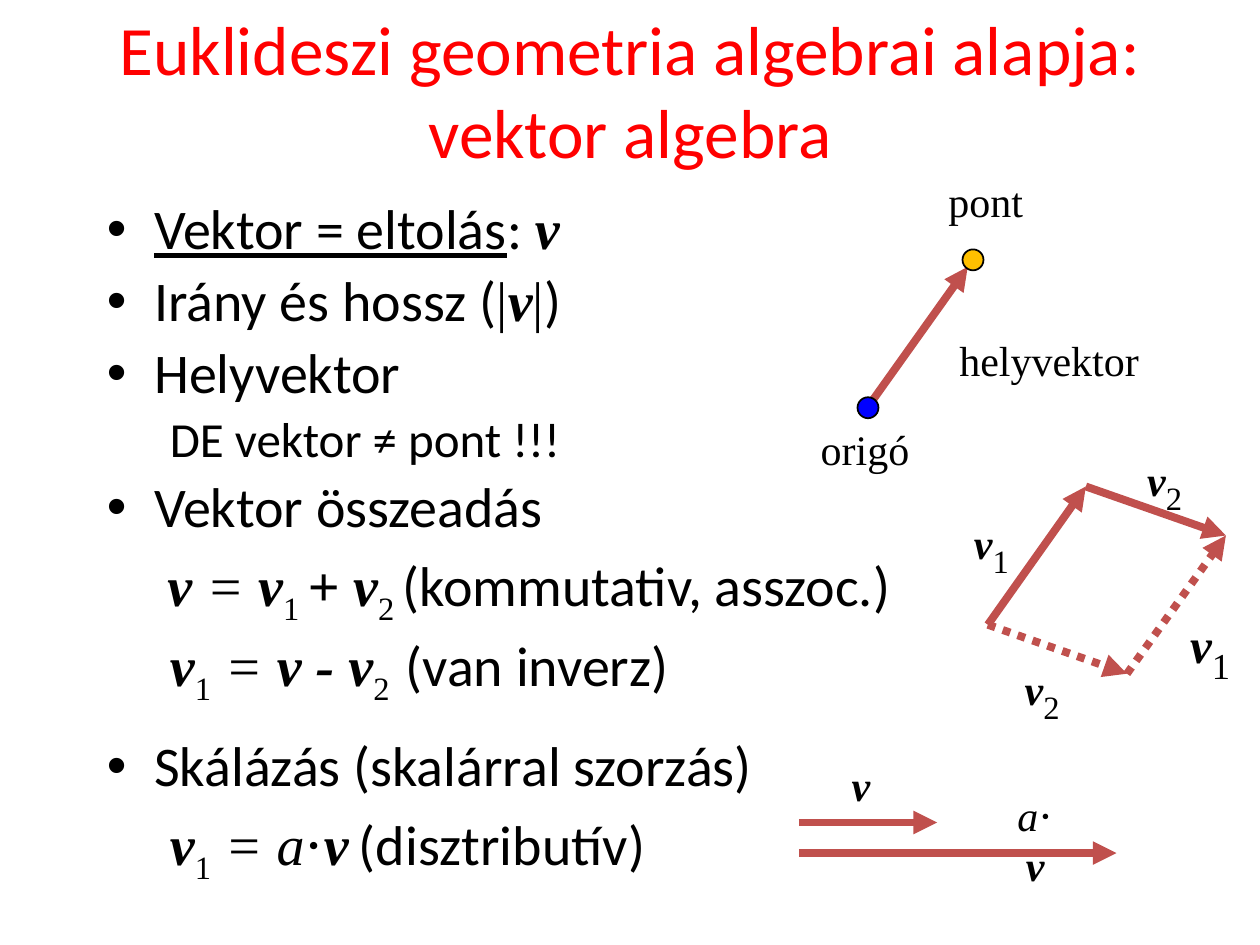
from lxml.etree import SubElement
from pptx import Presentation
from pptx.dml.color import RGBColor
from pptx.enum.dml import MSO_LINE
from pptx.enum.shapes import MSO_CONNECTOR, MSO_SHAPE
from pptx.enum.text import MSO_ANCHOR, MSO_AUTO_SIZE, PP_ALIGN
from pptx.oxml.ns import qn
from pptx.util import Pt

COLORS = {"title": "FF0000", "text": "000000", "vector": "C0504D",
          "point": "FFC000", "origin": "0000FF"}
SANS, SERIF = "Calibri", "Times New Roman"

# Run styles: font attributes, plus an optional baseline shift
STYLES = {
    "plain": {"name": SANS},
    "underlined": {"name": SANS, "underline": True},
    "serif": {"name": SERIF},
    "scalar": {"name": SERIF, "italic": True},
    "vector": {"name": SERIF, "bold": True, "italic": True},
    "subscript": {"name": SERIF, "baseline": -25000},
}
# Paragraph kinds: left margin, first-line indent, text size
KINDS = {"bullet": (27, -27, 32), "sum": (34.6, 0, 32),
         "formula": (36, 0, 32), "note": (36, 0, 28)}

BODY = [
    ("bullet", [("Vektor = eltolás", "underlined"), (": ", "plain"), ("v", "vector")]),
    ("bullet", [("Irány és hossz (", "plain"), ("|", "serif"), ("v", "vector"),
                ("|", "serif"), (")", "plain")]),
    ("bullet", [("Helyvektor", "plain")]),
    ("note", [("DE vektor ≠ pont !!!", "plain")]),
    ("bullet", [("Vektor összeadás", "plain")]),
    ("sum", [("v", "vector"), (" = ", "scalar"), ("v", "vector"), ("1 ", "subscript"),
             ("+ v", "vector"), ("2 ", "subscript"), ("(kommutativ, asszoc.)", "plain")]),
    ("formula", [("v", "vector"), ("1", "subscript"), (" = ", "scalar"),
                 ("v - v", "vector"), ("2  ", "subscript"), ("(van inverz)", "plain")]),
    ("bullet", [("Skálázás (skalárral szorzás)", "plain")]),
    ("formula", [("v", "vector"), ("1", "subscript"), (" = a⋅", "scalar"),
                 ("v\t", "vector"), ("(disztributív)", "plain")]),
]
SECTION_GAP = 15.6   # extra space before the scaling section
REMARK_TAB = 187     # where the remark after the last formula starts


def add_run(paragraph, text, style, size, color="text"):
    run = paragraph.add_run()
    run.text = text
    values = {"size": Pt(size), "bold": False, "italic": False, **STYLES[style]}
    baseline = values.pop("baseline", None)
    for name, value in values.items():
        setattr(run.font, name, value)
    run.font.color.rgb = RGBColor.from_string(COLORS[color])
    if baseline:
        run.font._element.set("baseline", str(baseline))


def add_title(slide, left, top, width, height):
    title = slide.shapes.title
    box = {"left": left, "top": top, "width": width, "height": height}
    for name, value in box.items():
        setattr(title, name, Pt(value))
    title.text_frame.vertical_anchor = MSO_ANCHOR.MIDDLE
    paragraph = title.text_frame.paragraphs[0]
    paragraph.alignment = PP_ALIGN.CENTER
    add_run(paragraph, "Euklideszi geometria algebrai alapja: vektor algebra",
            "plain", 39.6, "title")


def add_body(slide, left, top, width, height):
    frame = slide.shapes.add_textbox(Pt(left), Pt(top), Pt(width), Pt(height)).text_frame
    frame.word_wrap = True
    for index, (kind, runs) in enumerate(BODY):
        paragraph = frame.add_paragraph() if index else frame.paragraphs[0]
        margin, indent, size = KINDS[kind]
        starts_section = runs[0][0].startswith("Skálázás")
        paragraph.line_spacing = 0.9
        paragraph.space_before = Pt(0.2 * size + SECTION_GAP * starts_section)
        properties = paragraph._p.get_or_add_pPr()
        properties.set("marL", str(Pt(margin)))
        properties.set("indent", str(Pt(indent)))
        if kind == "bullet":
            SubElement(properties, qn("a:buFont"), typeface="Arial")
            SubElement(properties, qn("a:buChar"), char="•")
        if any("\t" in text for text, style in runs):
            tabs = SubElement(properties, qn("a:tabLst"))
            SubElement(tabs, qn("a:tab"), pos=str(Pt(REMARK_TAB)), algn="l")
        for text, style in runs:
            add_run(paragraph, text, style, size)


def add_label(slide, left, top, width, height, runs, wrap=False):
    frame = slide.shapes.add_textbox(Pt(left), Pt(top), Pt(width), Pt(height)).text_frame
    frame.word_wrap = wrap
    frame.auto_size = MSO_AUTO_SIZE.NONE if wrap else MSO_AUTO_SIZE.SHAPE_TO_FIT_TEXT
    frame.paragraphs[0].alignment = PP_ALIGN.CENTER
    for text, style, size in runs:
        add_run(frame.paragraphs[0], text, style, size)


def add_vector(slide, start, end, dotted=False):
    connector = slide.shapes.add_connector(
        MSO_CONNECTOR.STRAIGHT, *(Pt(value) for value in (*start, *end)))
    connector.line.color.rgb = RGBColor.from_string(COLORS["vector"])
    connector.line.width = Pt(4.5)
    if dotted:
        connector.line.dash_style = MSO_LINE.ROUND_DOT
    SubElement(connector.line._get_or_add_ln(), qn("a:tailEnd"), type="triangle")
    SubElement(connector._element.spPr, qn("a:effectLst"))


def add_dot(slide, left, top, color):
    dot = slide.shapes.add_shape(MSO_SHAPE.OVAL, Pt(left), Pt(top), Pt(12), Pt(12))
    dot.shadow.inherit = False
    dot.fill.solid()
    dot.fill.fore_color.rgb = RGBColor.from_string(COLORS[color])
    dot.line.color.rgb = RGBColor.from_string(COLORS["text"])
    dot.line.width = Pt(1)


def indexed_vector(index, size):
    return [("v", "vector", size), (index, "subscript", size + 8)]


def add_position_vector(slide, left, top):
    add_vector(slide, (left + 34.5, top + 136), (left + 91.5, top + 56))
    add_dot(slide, left + 88.5, top + 46, "point")
    add_dot(slide, left + 28.5, top + 130.5, "origin")
    for text, x, y, width in (("origó", 0, 142, 65.5), ("pont", 73, 0, 57.5),
                              ("helyvektor", 79, 91, 118)):
        add_label(slide, left + x, top + y, width, 36.5, [(text, "serif", 24)])


def add_vector_sum(slide, left, top, width, height):
    # Parallelogram: solid path over the top, dotted path below
    start, end = (left, top + 79), (left + width, top + 28)
    upper, lower = (left + 56, top), (left + 79.5, top + height)
    add_vector(slide, start, upper)
    add_vector(slide, upper, end)
    add_vector(slide, start, lower, dotted=True)
    add_vector(slide, lower, end, dotted=True)
    for index, x, y, size in (("1", -16, 6, 24), ("2", 83, -30, 24),
                              ("2", 13, 89.5, 24), ("1", 106, 61.5, 28)):
        add_label(slide, left + x, top + y, 1.5 * size, 36, indexed_vector(index, size))


def add_scaling(slide, left, top, width):
    for y, length in ((39.5, 79), (57, width)):
        add_vector(slide, (left, top + y), (left + length, top + y))
    add_label(slide, left + 23, top, 25, 36, [("v", "vector", 24)])
    add_label(slide, left + 113.5, top + 17, 43, 36,
              [("a", "scalar", 24), ("⋅", "serif", 24), ("v", "vector", 24)], wrap=True)


def main():
    presentation = Presentation()
    presentation.slide_width, presentation.slide_height = Pt(720), Pt(540)
    slide = presentation.slides.add_slide(presentation.slide_layouts[5])
    add_title(slide, 54, 6, 612, 90)
    add_body(slide, 54, 111.5, 612, 408)
    add_position_vector(slide, 461.5, 96.5)
    add_vector_sum(slide, 564.5, 278, 136, 107)
    add_scaling(slide, 456.5, 430.5, 181.5)
    presentation.save("out.pptx")


if __name__ == "__main__":
    main()
